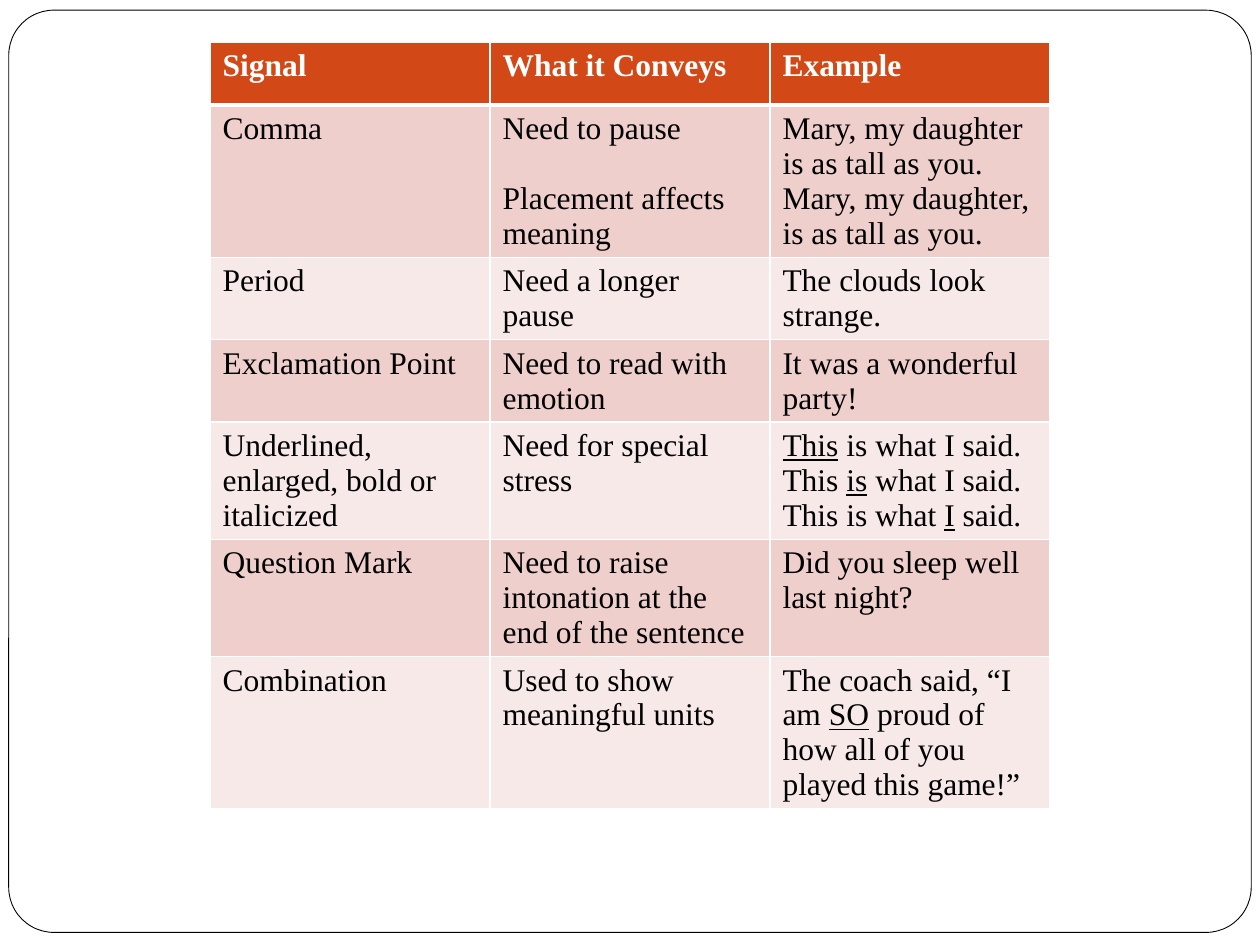
from lxml import etree
from pptx import Presentation
from pptx.dml.color import RGBColor
from pptx.enum.shapes import MSO_SHAPE
from pptx.oxml.ns import qn
from pptx.util import Pt

ROUNDED = MSO_SHAPE.ROUNDED_RECTANGLE
FONT = "Times New Roman"
SIZE, LINE = 18, 20
WHITE, BLACK, HEADER = "FFFFFF", "000000", "D34817"
BANDS = ("EFCFCC", "F7E9E8")
COL_WIDTH, HEADER_HEIGHT, ROW_HEIGHT, TABLE_HEIGHT = 160, 36, 29.5, 468

# Each cell is a list of paragraphs; text between underscores is underlined.
ROWS = [
    (["Signal"], ["What it Conveys"], ["Example"]),
    (["Comma"],
     ["Need to pause", "Placement affects meaning"],
     ["Mary, my daughter is as tall as you.", "Mary, my daughter, is as tall as you."]),
    (["Period"], ["Need a longer pause"], ["The clouds look strange."]),
    (["Exclamation Point"], ["Need to read with emotion"], ["It was a wonderful party!"]),
    (["Underlined, enlarged, bold or italicized"],
     ["Need for special stress"],
     ["_This_ is what I said.", "This _is_ what I said.", "This is what _I_ said."]),
    (["Question Mark"],
     ["Need to raise intonation at the end of the sentence"],
     ["Did you sleep well last night?"]),
    (["Combination"],
     ["Used to show meaningful units"],
     ["The coach said, “I am _SO_ proud of how all of you played this game!”"]),
]


def rgb(value):
    """Turn a hex string into a colour."""
    return RGBColor.from_string(value)


def add_frame(s):
    """Draw the rounded outline around the slide."""
    sp = s.shapes.add_shape(ROUNDED, Pt(5), Pt(5.8), Pt(710), Pt(527))
    sp.adjustments[0] = 0.049
    sp.shadow.inherit = False
    sp.fill.solid()
    sp.fill.fore_color.rgb = rgb(WHITE)
    sp.line.color.rgb = rgb(BLACK)
    sp.line.width = Pt(0.5)


def add_runs(p, text, color, bold):
    """Add the runs of a paragraph, underlining the marked ones."""
    for i, part in enumerate(text.split("_")):
        if part:
            r = p.add_run()
            r.text = part
            r.font.name = FONT
            r.font.size = Pt(SIZE)
            r.font.bold = bold
            r.font.underline = i % 2 == 1
            r.font.color.rgb = rgb(color)


def set_borders(cell, top, bottom):
    """Give a cell white borders of the given top and bottom widths."""
    tc_pr = cell._tc.get_or_add_tcPr()
    widths = {"a:lnL": 1, "a:lnR": 1, "a:lnT": top, "a:lnB": bottom}
    for i, (tag, width) in enumerate(widths.items()):
        ln = etree.Element(qn(tag), w=str(Pt(width)))
        fill = etree.SubElement(ln, qn("a:solidFill"))
        etree.SubElement(fill, qn("a:srgbClr"), val=WHITE)
        tc_pr.insert(i, ln)


def fill_cell(cell, paragraphs, row):
    """Write and format one table cell."""
    header = row == 0
    cell.fill.solid()
    cell.fill.fore_color.rgb = rgb(HEADER if header else BANDS[(row - 1) % 2])
    set_borders(cell, 3 if row == 1 else 1, 3 if header else 1)
    tf = cell.text_frame
    for i, text in enumerate(paragraphs):
        p = tf.add_paragraph() if i else tf.paragraphs[0]
        add_runs(p, text, WHITE if header else BLACK, header)


def add_signal_table(s):
    """Add the table of punctuation signals."""
    width = COL_WIDTH * len(ROWS[0])
    gf = s.shapes.add_table(len(ROWS), len(ROWS[0]), Pt(120), Pt(24),
                            Pt(width), Pt(TABLE_HEIGHT))
    table = gf.table
    for col in table.columns:
        col.width = Pt(COL_WIDTH)
    for i, cells in enumerate(ROWS):
        table.rows[i].height = Pt(ROW_HEIGHT if i else HEADER_HEIGHT)
        for j, paragraphs in enumerate(cells):
            fill_cell(table.cell(i, j), paragraphs, i)
    table.cell(1, 1).text_frame.paragraphs[1].space_before = Pt(LINE)
    gf.height = Pt(TABLE_HEIGHT)


def main():
    """Build the slide and save it."""
    prs = Presentation()
    prs.slide_width, prs.slide_height = Pt(720), Pt(540)
    s = prs.slides.add_slide(prs.slide_layouts[6])
    add_frame(s)
    add_signal_table(s)
    prs.save("out.pptx")


if __name__ == "__main__":
    main()
